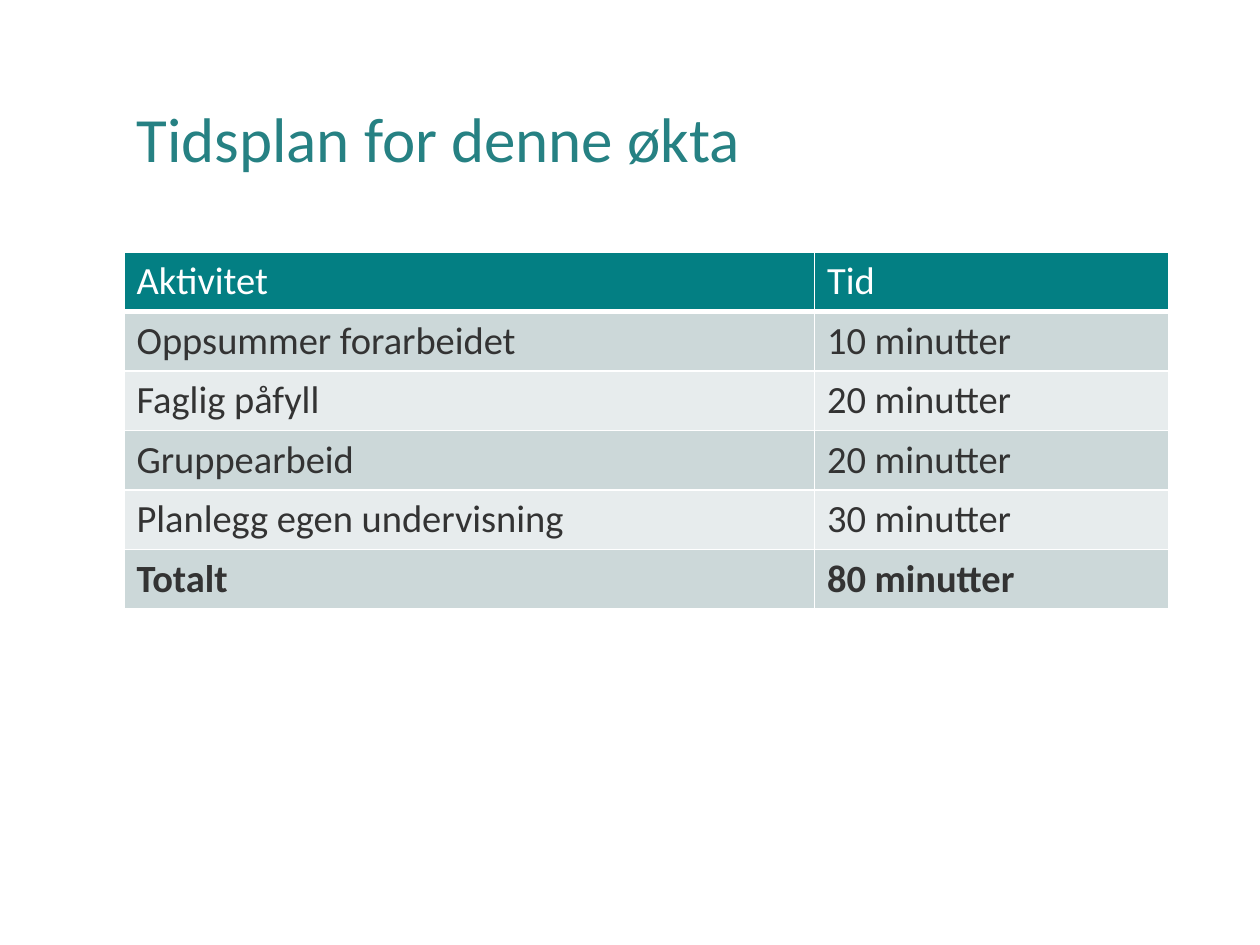
from dataclasses import dataclass

from lxml.etree import SubElement
from pptx import Presentation
from pptx.dml.color import RGBColor
from pptx.enum.text import MSO_ANCHOR
from pptx.oxml.ns import qn
from pptx.util import Cm, Pt


@dataclass(frozen=True)
class Theme:
    """Colours, font and type sizes of the slide."""
    font: str = "Calibri"
    title_color: str = "268183"
    header_fill: str = "037F83"
    header_text: str = "FFFFFF"
    body_text: str = "333333"
    band_fills: tuple = ("CCD8D9", "E7ECED")
    border: str = "FFFFFF"
    title_size: int = 36
    table_size: int = 22
    thin_line: int = 1
    header_line: int = 3


THEME = Theme()
LEFT, WIDTH = Cm(2.5), Cm(21.06)
COLUMN_WIDTHS = (Cm(13.92), Cm(7.14))
ROW_HEIGHT = Cm(1.2)
SCHEDULE = (
    ("Aktivitet", "Tid"),
    ("Oppsummer forarbeidet", "10 minutter"),
    ("Faglig påfyll", "20 minutter"),
    ("Gruppearbeid", "20 minutter"),
    ("Planlegg egen undervisning", "30 minutter"),
    ("Totalt", "80 minutter"),
)


def write(paragraph, wording, color, size, bold=False):
    """Add one formatted run to a paragraph."""
    run = paragraph.add_run()
    run.text = wording
    text_format = {"name": THEME.font, "size": Pt(size), "bold": bold}
    for attribute, value in text_format.items():
        setattr(run.font, attribute, value)
    run.font.color.rgb = RGBColor.from_string(color)


def add_title(slide, wording):
    """Place the slide title, centred vertically in its box."""
    title = slide.shapes.add_textbox(LEFT, Cm(1.02), WIDTH, Cm(3.68))
    frame_format = {"word_wrap": True, "vertical_anchor": MSO_ANCHOR.MIDDLE}
    for attribute, value in frame_format.items():
        setattr(title.text_frame, attribute, value)
    heading = title.text_frame.paragraphs[0]
    heading.line_spacing = 0.9
    write(heading, wording, THEME.title_color, THEME.title_size)


def set_borders(cell, widths):
    """Draw the cell borders, with widths in points keyed by side."""
    properties = cell._tc.get_or_add_tcPr()
    for position, (side, width) in enumerate(widths.items()):
        line = SubElement(properties, qn(f"a:ln{side}"), w=str(Pt(width)))
        fill = SubElement(line, qn("a:solidFill"))
        SubElement(fill, qn("a:srgbClr"), val=THEME.border)
        properties.remove(line)
        properties.insert(position, line)


def add_schedule(slide, schedule):
    """Place the timetable with a header, banded rows and a bold total."""
    height = ROW_HEIGHT * len(schedule)
    table = slide.shapes.add_table(
        len(schedule), len(COLUMN_WIDTHS), LEFT, Cm(5.08), WIDTH, height
    ).table
    for column, width in zip(table.columns, COLUMN_WIDTHS):
        column.width = width
    last = len(schedule) - 1
    for index, entries in enumerate(schedule):
        table.rows[index].height = ROW_HEIGHT
        header = index == 0
        fill = THEME.header_fill if header else THEME.band_fills[(index - 1) % 2]
        color = THEME.header_text if header else THEME.body_text
        borders = dict.fromkeys("LRTB", THEME.thin_line)
        if header:
            borders["B"] = THEME.header_line
        elif index == 1:
            borders["T"] = THEME.header_line
        for cell, wording in zip(table.rows[index].cells, entries):
            cell.fill.solid()
            cell.fill.fore_color.rgb = RGBColor.from_string(fill)
            set_borders(cell, borders)
            write(cell.text_frame.paragraphs[0], wording, color,
                  THEME.table_size, bold=index == last)


def main():
    """Build the timetable slide and save it."""
    presentation = Presentation()
    slide_size = {"slide_width": Cm(25.4), "slide_height": Cm(19.05)}
    for attribute, value in slide_size.items():
        setattr(presentation, attribute, value)
    slide = presentation.slides.add_slide(presentation.slide_layouts[6])
    add_title(slide, "Tidsplan for denne økta")
    add_schedule(slide, SCHEDULE)
    presentation.save("out.pptx")


if __name__ == "__main__":
    main()
